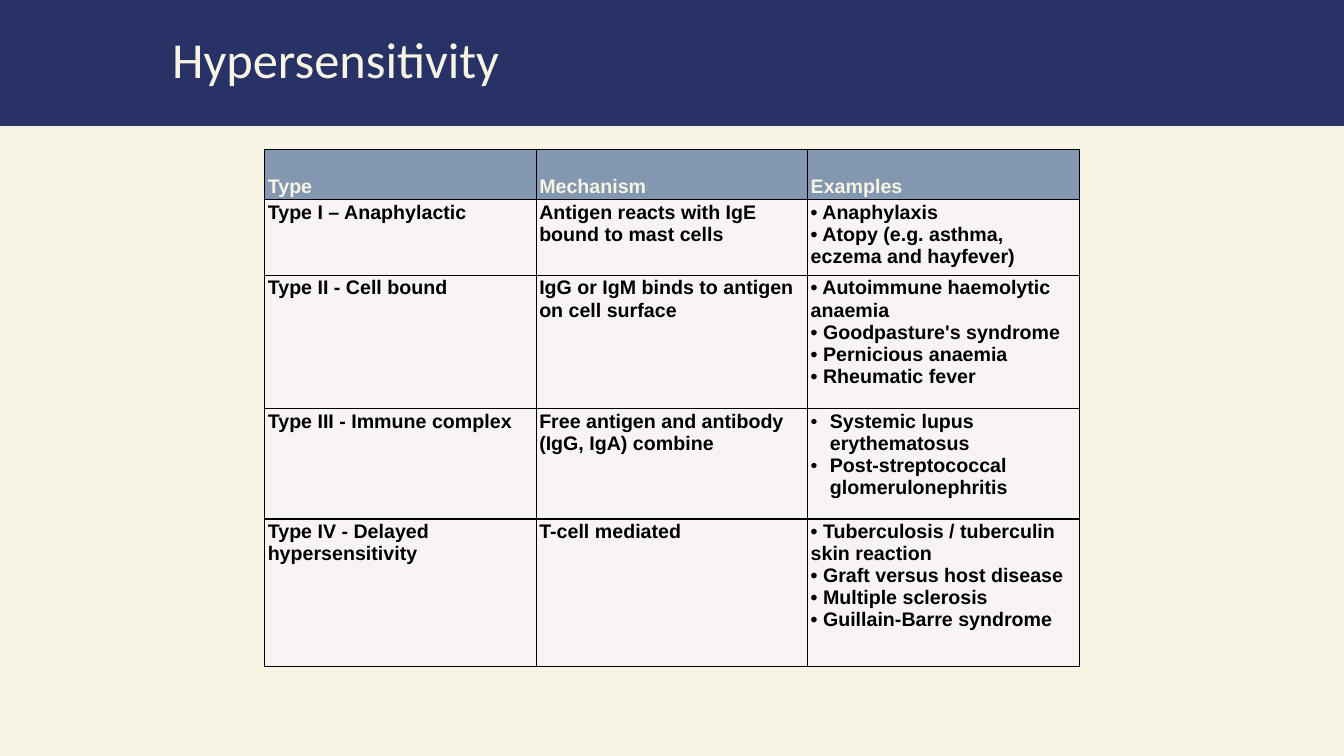
from lxml.etree import SubElement
from pptx import Presentation
from pptx.dml.color import RGBColor
from pptx.enum.shapes import MSO_SHAPE as Shape
from pptx.enum.text import MSO_ANCHOR as Anchor
from pptx.oxml.ns import qn
from pptx.util import Inches, Pt

GRID_COLUMNS, GRID_ROWS = 40, 30
COLORS = {
    "cream": "F8F4E4",
    "navy": "293267",
    "header": "8497B0",
    "body": "F8F3F5",
    "black": "000000",
}
TITLE_FONT = {"name": "Calibri", "size": Pt(36)}
TABLE_FONT = {"name": "Arial", "size": Pt(14), "bold": True}
CELL_MARGINS = {
    "margin_left": Inches(0.03),
    "margin_right": Inches(0.03),
    "margin_top": Inches(0.02),
    "margin_bottom": Inches(0.02),
}

HEADINGS = ("Type", "Mechanism", "Examples")
# A string holds line breaks; a tuple holds bulleted paragraphs.
HYPERSENSITIVITY_TYPES = [
    ("Type I – Anaphylactic",
     "Antigen reacts with IgE bound to mast cells",
     "• Anaphylaxis\v• Atopy (e.g. asthma, eczema and hayfever)"),
    ("Type II - Cell bound",
     "IgG or IgM binds to antigen on cell surface",
     "• Autoimmune haemolytic anaemia\v• Goodpasture's syndrome\v"
     "• Pernicious anaemia\v• Rheumatic fever"),
    ("Type III - Immune complex",
     "Free antigen and antibody (IgG, IgA) combine",
     ("Systemic lupus erythematosus",
      "Post-streptococcal glomerulonephritis")),
    ("Type IV - Delayed hypersensitivity",
     "T-cell mediated",
     "• Tuberculosis / tuberculin skin reaction\v• Graft versus host disease\v"
     "• Multiple sclerosis\v• Guillain-Barre syndrome"),
]
ROW_HEIGHTS = (2, 3, 5.28, 4.4, 5.84)
COLUMN_WIDTH = 8.08


def apply(target, values):
    for attribute, value in values.items():
        setattr(target, attribute, value)


def paint(fill, color):
    fill.solid()
    fill.fore_color.rgb = RGBColor.from_string(COLORS[color])


class SlideBuilder:
    """Draws on one slide; lengths are grid columns and rows."""

    def __init__(self, deck):
        self.column = deck.slide_width / GRID_COLUMNS
        self.row = deck.slide_height / GRID_ROWS
        self.slide = deck.slides.add_slide(deck.slide_layouts[6])
        paint(self.slide.background.fill, "cream")

    def box(self, left, top, width, height):
        return (round(left * self.column), round(top * self.row),
                round(width * self.column), round(height * self.row))

    def band(self, *area, color):
        band = self.slide.shapes.add_shape(Shape.RECTANGLE, *self.box(*area))
        band.shadow.inherit = False
        paint(band.fill, color)
        band.line.fill.background()

    def title(self, text, *area):
        frame = self.slide.shapes.add_textbox(*self.box(*area)).text_frame
        frame.word_wrap = True
        self.add_text(frame, (text,), TITLE_FONT, "cream")

    def add_text(self, frame, texts, font, color, bulleted=False):
        for index, text in enumerate(texts):
            paragraph = frame.add_paragraph() if index else frame.paragraphs[0]
            paragraph.text = text
            if bulleted:
                self.add_bullet(paragraph)
            for run in paragraph.runs:
                apply(run.font, font)
                run.font.color.rgb = RGBColor.from_string(COLORS[color])

    def add_bullet(self, paragraph):
        properties = paragraph._p.get_or_add_pPr()
        hanging = Inches(0.19)
        properties.set("marL", str(hanging))
        properties.set("indent", str(-hanging))
        bullet_color = SubElement(properties, qn("a:buClr"))
        SubElement(bullet_color, qn("a:srgbClr"), val=COLORS["black"])
        SubElement(properties, qn("a:buFont"), typeface="Arial")
        SubElement(properties, qn("a:buChar"), char="•")

    def table(self, records, top, column_width, row_heights):
        """Adds a table centred across the slide, with a header row."""
        width = column_width * len(records[0])
        area = self.box((GRID_COLUMNS - width) / 2, top, width, sum(row_heights))
        table = self.slide.shapes.add_table(
            len(records), len(records[0]), *area).table
        for column in table.columns:
            column.width = round(column_width * self.column)
        for row, height in zip(table.rows, row_heights):
            row.height = round(height * self.row)
        for row_index, record in enumerate(records):
            for column_index, content in enumerate(record):
                self.fill_cell(table.cell(row_index, column_index), content,
                               is_header=row_index == 0)

    def fill_cell(self, cell, content, is_header):
        apply(cell, CELL_MARGINS)
        cell.vertical_anchor = Anchor.BOTTOM if is_header else Anchor.TOP
        bulleted = isinstance(content, tuple)
        self.add_text(cell.text_frame, content if bulleted else (content,),
                      TABLE_FONT, "cream" if is_header else "black", bulleted)
        self.add_borders(cell)
        paint(cell.fill, "header" if is_header else "body")

    def add_borders(self, cell):
        properties = cell._tc.get_or_add_tcPr()
        for side in ("lnL", "lnR", "lnT", "lnB"):
            border = SubElement(properties, qn(f"a:{side}"), w=str(Pt(1)))
            border_fill = SubElement(border, qn("a:solidFill"))
            SubElement(border_fill, qn("a:srgbClr"), val=COLORS["black"])


def main():
    deck = Presentation()
    deck.slide_width, deck.slide_height = Inches(13.33), Inches(7.5)
    builder = SlideBuilder(deck)
    builder.band(0, 0, GRID_COLUMNS, 5, color="navy")
    builder.title("Hypersensitivity", 4.83, 0.92, 20.46, 2.84)
    builder.table([HEADINGS, *HYPERSENSITIVITY_TYPES], 5.92,
                  COLUMN_WIDTH, ROW_HEIGHTS)
    deck.save("out.pptx")


if __name__ == "__main__":
    main()
